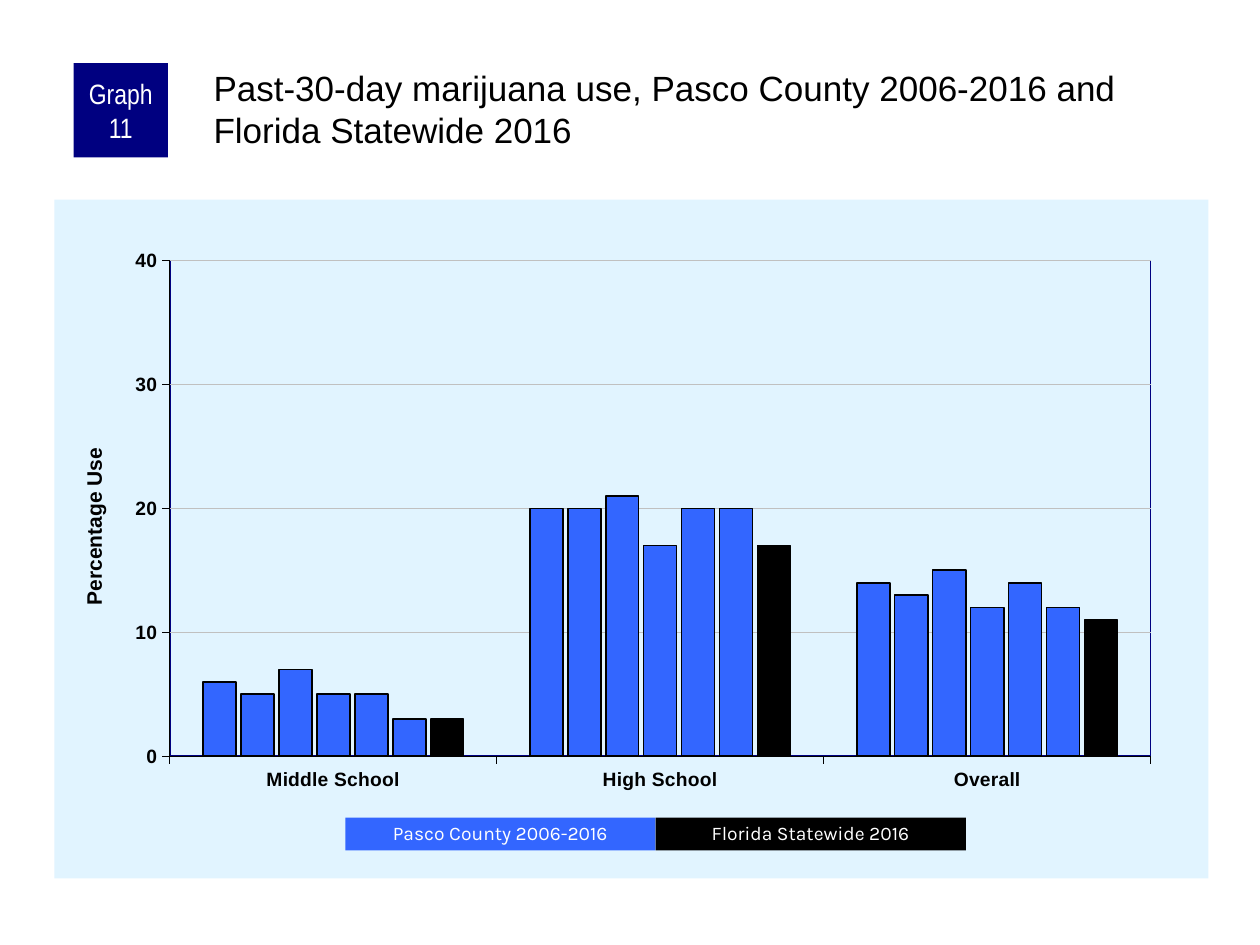
"""Build the slide on past-30-day marijuana use in Pasco County."""
from pptx import Presentation
from pptx.chart.data import CategoryChartData
from pptx.dml.color import RGBColor
from pptx.enum.chart import XL_CHART_TYPE, XL_TICK_MARK
from pptx.enum.shapes import MSO_SHAPE
from pptx.enum.text import MSO_ANCHOR, MSO_AUTO_SIZE, PP_ALIGN
from pptx.oxml import parse_xml
from pptx.oxml.ns import nsdecls, qn
from pptx.util import Pt

COLUMN = XL_CHART_TYPE.COLUMN_CLUSTERED
OUT = XL_TICK_MARK.OUTSIDE
RECT = MSO_SHAPE.RECTANGLE
TOP, MIDDLE = MSO_ANCHOR.TOP, MSO_ANCHOR.MIDDLE
LEFT, CENTER = PP_ALIGN.LEFT, PP_ALIGN.CENTER
NO_FIT = MSO_AUTO_SIZE.NONE

BLUE, NAVY, BLACK, WHITE = "3366FF", "000080", "000000", "FFFFFF"
PALE, GREY = "E1F4FF", "C0C0C0"

TITLE = "Past-30-day marijuana use, Pasco County 2006-2016 and Florida Statewide 2016"
BADGE = "Graph 11"
AXIS = "Percentage Use"
GROUPS = ["Middle School", "High School", "Overall"]
COUNTY = [(6, 20, 14), (5, 20, 13), (7, 21, 15), (5, 17, 12), (5, 20, 14), (3, 20, 12)]
STATE = [(3, 17, 11)]
LEGEND = [("Pasco County 2006-2016", BLUE), ("Florida Statewide 2016", BLACK)]


def color(code):
    """Turn a hex string into a colour."""
    return RGBColor.from_string(code)


def style(font, name, size, code, bold=False):
    """Set the face, size, colour and weight of a font."""
    font.name, font.size, font.bold = name, Pt(size), bold
    font.color.rgb = color(code)


def stroke(line, code, width):
    """Set the colour and width of a line."""
    line.color.rgb = color(code)
    line.width = Pt(width)


def write(shape, text, name, size, code, align, anchor, pads, space=None):
    """Fill a shape with one styled run of text."""
    frame = shape.text_frame
    frame.word_wrap = True
    frame.auto_size = NO_FIT
    frame.vertical_anchor = anchor
    frame.margin_left, frame.margin_top, frame.margin_right, frame.margin_bottom = map(Pt, pads)
    para = frame.paragraphs[0]
    para.alignment = align
    if space:
        para.line_spacing = space
    run = para.add_run()
    run.text = text
    style(run.font, name, size, code)


def add_box(slide, box, fill):
    """Add a plain filled rectangle."""
    shape = slide.shapes.add_shape(RECT, *map(Pt, box))
    shape.shadow.inherit = False
    shape.fill.solid()
    shape.fill.fore_color.rgb = color(fill)
    shape.line.fill.background()
    return shape


def place(node, index, spots, inner=False):
    """Give a chart part a manual layout."""
    for old in node.findall(qn("c:layout")):
        node.remove(old)
    target = '<c:layoutTarget val="inner"/>' if inner else ""
    modes = '<c:xMode val="edge"/><c:yMode val="edge"/>'
    sizes = "".join(f'<c:{key} val="{spot}"/>' for key, spot in zip("xywh", spots))
    node.insert(index, parse_xml(
        f'<c:layout {nsdecls("c")}><c:manualLayout>{target}{modes}{sizes}'
        "</c:manualLayout></c:layout>"))


def paint(fill, line):
    """Return chart shape properties built from fill and line markup."""
    return parse_xml(f'<c:spPr {nsdecls("c", "a")}>{fill}{line}</c:spPr>')


def solid(code):
    """Return the markup of a solid fill."""
    return f'<a:solidFill><a:srgbClr val="{code}"/></a:solidFill>'


def add_chart(slide):
    """Add the column chart with its axes and backgrounds."""
    data = CategoryChartData()
    data.categories = GROUPS
    for num, vals in enumerate(COUNTY + STATE, 1):
        data.add_series(f"Series {num}", vals)
    chart = slide.shapes.add_chart(COLUMN, Pt(31), Pt(114), Pt(659.5), Pt(388), data).chart
    chart.has_legend = chart.has_title = False
    style(chart.font, "Arial", 8, BLACK)

    bars = chart.plots[0]
    bars.gap_width, bars.overlap = 200, -15
    bars.vary_by_categories = False
    for num, row in enumerate(bars.series):
        row.format.fill.solid()
        row.format.fill.fore_color.rgb = color(BLUE if num < len(COUNTY) else BLACK)
        stroke(row.format.line, BLACK, 1)

    vert = chart.value_axis
    for axis in (chart.category_axis, vert):
        axis.major_tick_mark = OUT
        style(axis.tick_labels.font, "Arial", 11, BLACK, True)
        stroke(axis.format.line, BLACK, 0.25)
    vert.minimum_scale, vert.maximum_scale, vert.major_unit = 0, 40, 10
    stroke(vert.major_gridlines.format.line, GREY, 0.25)
    run = vert.axis_title.text_frame.paragraphs[0].add_run()
    run.text = AXIS
    style(run.font, "Arial", 12, BLACK, True)

    root = chart.element if hasattr(chart, "element") else chart._chartSpace
    body = root.find(qn("c:chart"))
    area = body.find(qn("c:plotArea"))
    place(area, 0, (0.1, 0.09, 0.85, 0.73), True)
    place(area.find(qn("c:valAx")).find(qn("c:title")), 1, (0.02, 0.36))
    area.append(paint("<a:noFill/>", f'<a:ln w="{Pt(1)}">{solid(NAVY)}</a:ln>'))
    body.addnext(paint(solid(PALE), "<a:ln><a:noFill/></a:ln>"))


def main():
    """Build and save the slide."""
    deck = Presentation()
    deck.slide_width, deck.slide_height = Pt(720), Pt(540)
    slide = deck.slides.add_slide(deck.slide_layouts[5])
    add_chart(slide)

    badge = add_box(slide, (42, 36, 54, 54), NAVY)
    write(badge, BADGE, "Arial Narrow", 16, WHITE, CENTER, MIDDLE, (3.6, 0, 3.6, 0))

    title = slide.shapes.title
    title.left, title.top, title.width, title.height = map(Pt, (120, 36, 570, 60))
    write(title, TITLE, "Arial", 20, BLACK, LEFT, TOP, (2, 2, 0, 0))

    wide = 177.3
    for num, (text, fill) in enumerate(LEGEND):
        key = add_box(slide, (197.3 + num * wide, 467.3, wide, 18.7), fill)
        write(key, text, "Karla", 11, WHITE, CENTER, MIDDLE, (7.2, 3.6, 7.2, 3.6), 0.9)

    deck.save("out.pptx")


if __name__ == "__main__":
    main()
